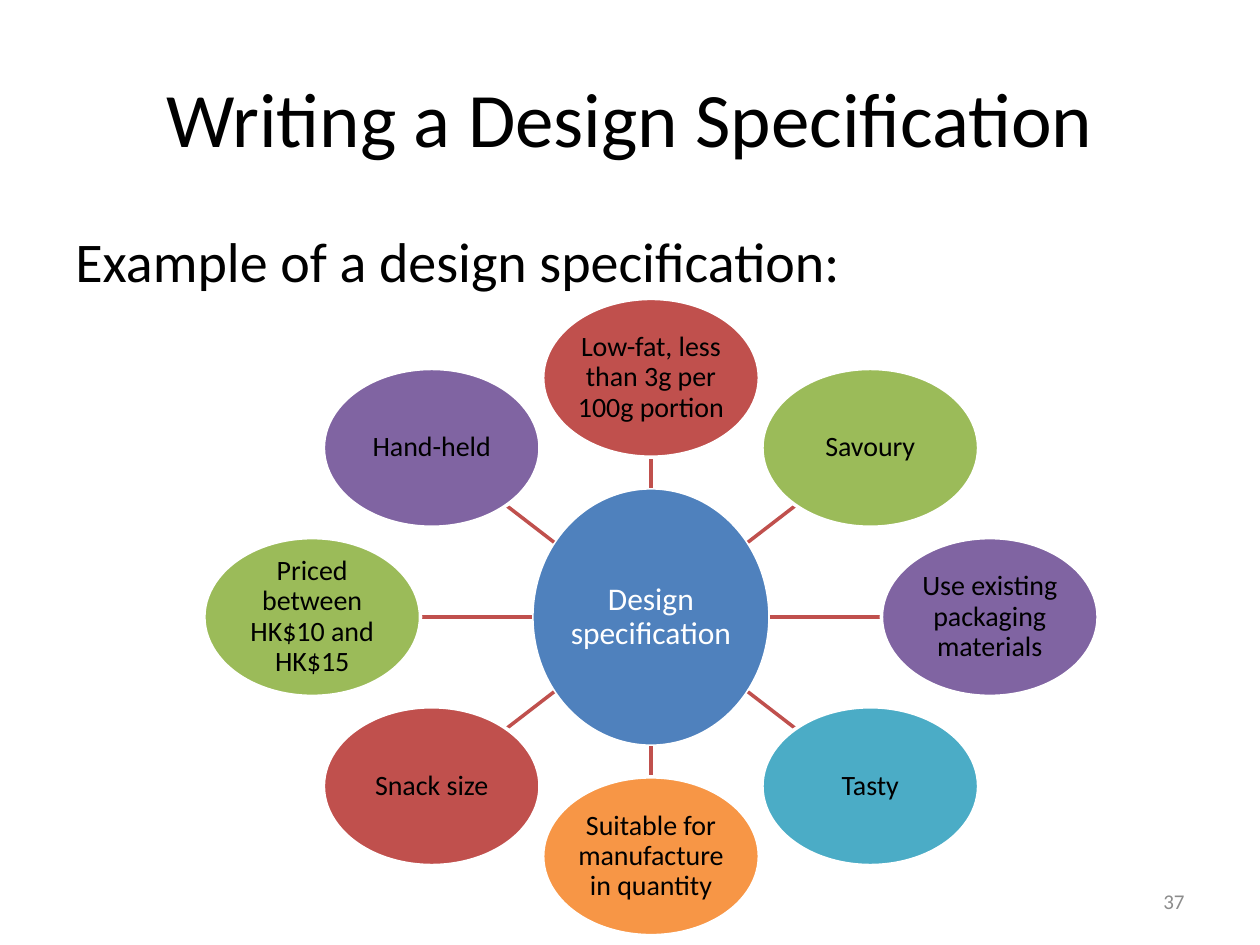
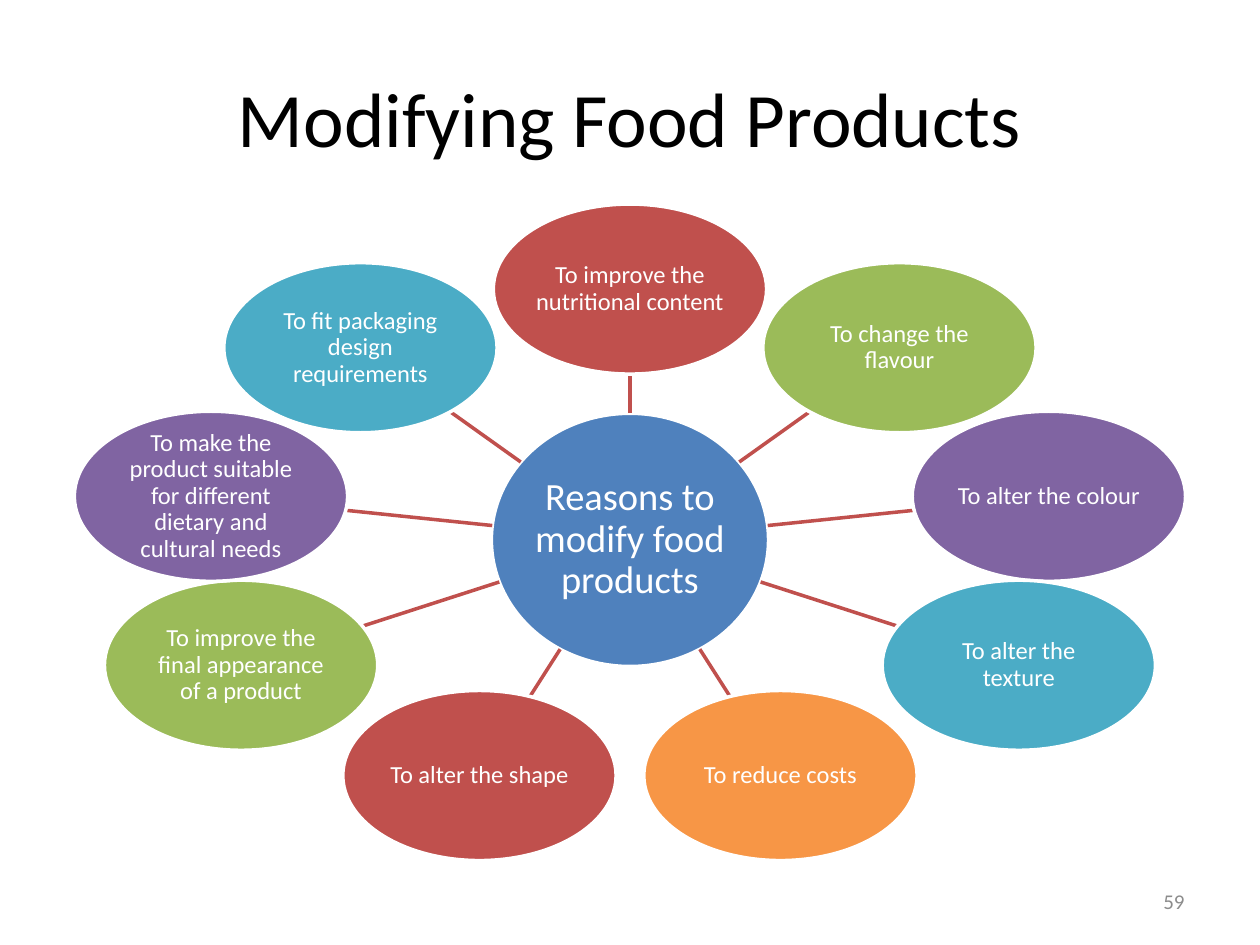
from dataclasses import dataclass
from itertools import cycle
from math import cos, hypot, pi

from lxml.etree import SubElement
from pptx import Presentation
from pptx.dml.color import RGBColor
from pptx.enum.shapes import MSO_CONNECTOR, MSO_SHAPE
from pptx.enum.text import MSO_ANCHOR, PP_ALIGN
from pptx.oxml.ns import qn
from pptx.util import Pt


# Colours and type sizes
@dataclass(frozen=True)
class Theme:
    font: str = "Calibri"
    black: str = "000000"
    white: str = "FFFFFF"
    grey: str = "8C8C8C"
    hub: str = "4F81BD"
    link: str = "C0504D"
    spokes: tuple = ("C0504D", "9BBB59", "8064A2", "4BACC6", "F79646")
    title_size: int = 44
    body_size: int = 32
    number_size: int = 12
    line_width: int = 2


@dataclass(frozen=True)
class Wheel:
    """A hub with labelled ellipses around it; lengths in points."""
    centre: tuple
    hub_size: tuple
    spoke_size: tuple
    rise: float       # vertical radius of the ring
    reaches: tuple    # sideways offsets from the top to the bottom of the ring
    hub_text: str
    hub_text_size: int
    labels: tuple
    label_size: int
    label_colour: str


class Painter:
    def __init__(self, deck, theme):
        self.deck, self.theme, self.page = deck, theme, None

    def new_page(self, title, number):
        self.page = self.deck.slides.add_slide(self.deck.slide_layouts[6])
        self.text(title, (36, 21.6, 648, 90), self.theme.title_size,
                  alignment=PP_ALIGN.CENTER)
        self.text(number, (516, 500.4, 168, 28.8), self.theme.number_size,
                  colour=self.theme.grey, alignment=PP_ALIGN.RIGHT)

    def text(self, words, place, size, colour=None, anchor=MSO_ANCHOR.MIDDLE,
             **paragraph_format):
        box = self.page.shapes.add_textbox(*map(Pt, place))
        self.fill_text(box, words, size, colour or self.theme.black,
                       {"vertical_anchor": anchor}, paragraph_format)

    def fill_text(self, shape, words, size, colour, frame_format, paragraph_format):
        frame = shape.text_frame
        para = frame.paragraphs[0]
        span = para.add_run()
        span.text = words
        span.font.color.rgb = RGBColor.from_string(colour)
        formats = (
            (frame, {"word_wrap": True, **frame_format}),
            (para, paragraph_format),
            (span.font, {"name": self.theme.font, "size": Pt(size)}),
        )
        for target, values in formats:
            for name, value in values.items():
                setattr(target, name, value)

    def ellipse(self, words, centre, size, fill, text_size, text_colour):
        (x, y), (width, height) = centre, size
        shape = self.page.shapes.add_shape(
            MSO_SHAPE.OVAL, *map(Pt, (x - width / 2, y - height / 2, width, height)))
        shape.shadow.inherit = False
        shape.fill.solid()
        shape.fill.fore_color.rgb = RGBColor.from_string(fill)
        self.outline(shape.line, self.theme.white)
        margins = {f"margin_{side}": Pt(1) for side in ("left", "top", "right", "bottom")}
        self.fill_text(shape, words, text_size, text_colour,
                       {"vertical_anchor": MSO_ANCHOR.MIDDLE, **margins},
                       {"alignment": PP_ALIGN.CENTER, "line_spacing": 0.9})

    def link(self, start, end):
        line = self.page.shapes.add_connector(
            MSO_CONNECTOR.STRAIGHT, *map(Pt, (*start, *end)))
        self.outline(line.line, self.theme.link)
        SubElement(line._element.spPr, qn("a:effectLst"))

    def outline(self, line, colour):
        line.color.rgb = RGBColor.from_string(colour)
        line.width = Pt(self.theme.line_width)

    def wheel(self, wheel):
        theme = self.theme
        x, y = wheel.centre
        self.ellipse(wheel.hub_text, wheel.centre, wheel.hub_size, theme.hub,
                     wheel.hub_text_size, theme.white)
        count = len(wheel.labels)
        for index, (label, fill) in enumerate(zip(wheel.labels, cycle(theme.spokes))):
            # The left half mirrors the right half
            right_half = index <= count / 2
            across = wheel.reaches[index] if right_half else -wheel.reaches[count - index]
            down = -wheel.rise * cos(2 * pi * index / count)
            spoke = (x + across, y + down)
            self.link(edge_point(wheel.centre, wheel.hub_size, across, down),
                      edge_point(spoke, wheel.spoke_size, -across, -down))
            self.ellipse(label, spoke, wheel.spoke_size, fill,
                         wheel.label_size, wheel.label_colour)


def edge_point(centre, size, across, down):
    """Where the ray from the centre of an ellipse meets its edge."""
    scale = 1 / hypot(across / (size[0] / 2), down / (size[1] / 2))
    return centre[0] + across * scale, centre[1] + down * scale


def main():
    theme = Theme()
    deck = Presentation()
    deck.slide_width, deck.slide_height = Pt(720), Pt(540)
    painter = Painter(deck, theme)

    # Design specification
    painter.new_page("Writing a Design Specification", "37")
    painter.text("Example of a design specification:", (36, 126, 648, 356.4),
                 theme.body_size, anchor=MSO_ANCHOR.TOP)
    painter.wheel(Wheel(
        centre=(372, 352.6), hub_size=(136, 147.6), spoke_size=(123.8, 90.7),
        rise=136.7, reaches=(0, 125.3, 193.6, 125.3, 0),
        hub_text="Design specification", hub_text_size=18,
        labels=("Low-fat, less than 3g per 100g portion", "Savoury",
                "Use existing packaging materials", "Tasty",
                "Suitable for manufacture in quantity", "Snack size",
                "Priced between HK$10 and HK$15", "Hand-held"),
        label_size=16, label_colour=theme.black))

    # Reasons for modifying products
    painter.new_page("Modifying Food Products", "59")
    painter.wheel(Wheel(
        centre=(360, 308.5), hub_size=(158.4, 144.7), spoke_size=(156.2, 97.2),
        rise=143.3, reaches=(0, 154, 239.4, 222.2, 86),
        hub_text="Reasons to modify food products", hub_text_size=22,
        labels=("To improve the nutritional content", "To change the flavour",
                "To alter the colour", "To alter the texture", "To reduce costs",
                "To alter the shape", "To improve the final appearance of a product",
                "To make the product suitable for different dietary and cultural needs",
                "To fit packaging design requirements"),
        label_size=14, label_colour=theme.white))

    deck.save("out.pptx")


if __name__ == "__main__":
    main()
